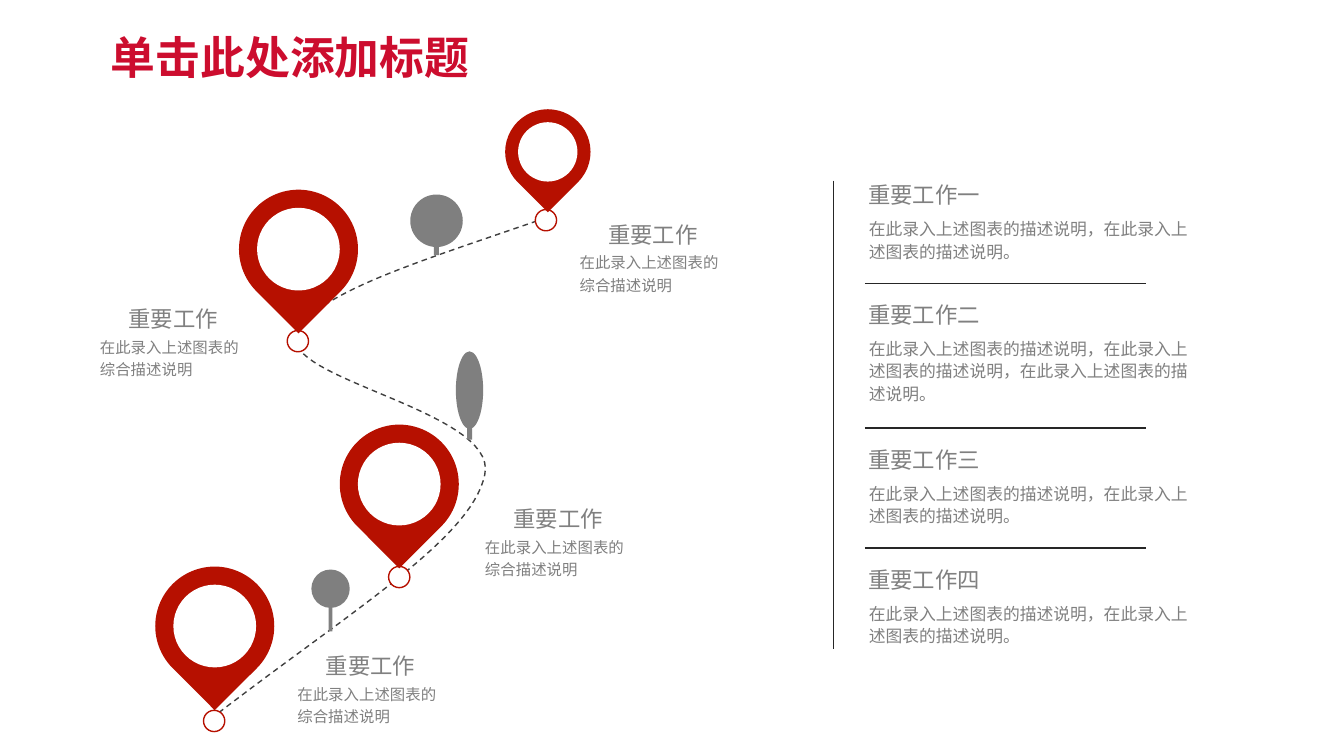
from lxml.etree import SubElement
from pptx import Presentation
from pptx.dml.color import RGBColor
from pptx.enum.dml import MSO_LINE
from pptx.enum.shapes import MSO_CONNECTOR, MSO_SHAPE
from pptx.enum.text import MSO_ANCHOR, PP_ALIGN
from pptx.oxml.ns import qn
from pptx.util import Pt

TITLE = "单击此处添加标题"
STOP_HEADING = "重要工作"
STOP_TEXT = "在此录入上述图表的综合描述说明"
# heading, description, number of lines it takes
SECTIONS = [
    ("重要工作一", "在此录入上述图表的描述说明，在此录入上述图表的描述说明。", 2),
    ("重要工作二", "在此录入上述图表的描述说明，在此录入上述图表的描述说明，"
                "在此录入上述图表的描述说明。", 3),
    ("重要工作三", "在此录入上述图表的描述说明，在此录入上述图表的描述说明。", 2),
    ("重要工作四", "在此录入上述图表的描述说明，在此录入上述图表的描述说明。", 2),
]
# pin centre, pin diameter, dot centre, top left of the description
STOPS = [
    ((391.3, 108.5), 61, (390, 157.3), (404.6, 173.5)),
    ((213.2, 178), 85, (212.8, 243.7), (61.9, 234)),
    ((285.2, 345.8), 85, (285.2, 412.2), (337, 376.6)),
    ((153.4, 447.2), 85, (153, 515), (203, 481.7)),
]
# canopy centre, canopy width and height, trunk width, trunk foot
TREES = [
    ((311.8, 157.7), (37.5, 37.5), 3.6, 182.3),
    ((335.4, 278.7), (19.5, 55.4), 3.6, 314),
    ((236.1, 420.5), (27.4, 27.4), 2.8, 451),
]
ROAD_START = (390.2, 155.5)
ROAD_CURVES = [
    ((306, 185), (218.9, 210.2), (211.7, 240.5)),
    ((204.5, 271.4), (356.4, 294.5), (346.3, 339.1)),
    ((337, 384.5), (252.7, 434.9), (152.6, 511.9)),
]
COLORS = {"title": "CC0D2E", "pin": "B61000", "tree": "7F7F7F", "text": "808080",
          "road": "404040", "rule": "262626", "white": "FFFFFF"}
FONT = "Noto Sans CJK SC"
DOT, HOLE = 15.2, 0.695
LIST_X, LIST_Y = 613, 126


def rgb(name):
    return RGBColor.from_string(COLORS[name])


def set_shape(sp, fill, line=None):
    sp.shadow.inherit = False
    sp.fill.solid()
    sp.fill.fore_color.rgb = rgb(fill)
    if line:
        sp.line.color.rgb = rgb(line)
        sp.line.width = Pt(1)
    else:
        sp.line.fill.background()
    return sp


def add_centred(shapes, kind, centre, w, h, fill, line=None):
    x, y = centre
    sp = shapes.add_shape(kind, Pt(x - w / 2), Pt(y - h / 2), Pt(w), Pt(h))
    return set_shape(sp, fill, line)


def set_font(p, size, color, latin=FONT, bold=False):
    f = p.font
    f.size, f.bold = Pt(size), bold
    f.color.rgb = rgb(color)
    f.name = latin
    SubElement(p._p.pPr.find(qn("a:defRPr")), qn("a:ea"), typeface=FONT)


def add_text(x, y, w, h, text, size, spacing=1.0, wrap=True, insets=(7.2, 3.6)):
    tf = s.shapes.add_textbox(Pt(x), Pt(y), Pt(w), Pt(h)).text_frame
    tf.word_wrap = wrap
    tf.margin_left = tf.margin_right = Pt(insets[0])
    tf.margin_top = tf.margin_bottom = Pt(insets[1])
    p = tf.paragraphs[0]
    p.text = text
    p.line_spacing = spacing
    set_font(p, size, "text")
    return p


def add_rule(x1, y1, x2, y2):
    ln = s.shapes.add_connector(MSO_CONNECTOR.STRAIGHT, Pt(x1), Pt(y1), Pt(x2), Pt(y2))
    ln.line.color.rgb = rgb("rule")
    ln.line.width = Pt(1)
    SubElement(ln._element.spPr, qn("a:effectLst"))


def bezier(a, b, c, d, steps=30):
    """Points along a cubic curve, without its start."""
    for i in range(1, steps + 1):
        t = i / steps
        u = 1 - t
        yield tuple(Pt(u**3 * a[k] + 3 * u * u * t * b[k] + 3 * u * t * t * c[k] + t**3 * d[k])
                    for k in (0, 1))


def add_road():
    fb = s.shapes.build_freeform(Pt(ROAD_START[0]), Pt(ROAD_START[1]))
    start = ROAD_START
    for b, c, end in ROAD_CURVES:
        fb.add_line_segments(bezier(start, b, c, end), close=False)
        start = end
    road = set_shape(fb.convert_to_shape(), "white", "road")
    road.fill.background()
    road.line.dash_style = MSO_LINE.DASH


prs = Presentation()
prs.slide_width, prs.slide_height = Pt(960), Pt(540)
s = prs.slides.add_slide(prs.slide_layouts[5])

title = s.shapes.title
title.left, title.top, title.width, title.height = Pt(72), Pt(20), Pt(828), Pt(45)
tf = title.text_frame
tf.vertical_anchor = MSO_ANCHOR.MIDDLE
p = tf.paragraphs[0]
p.text = TITLE
p.alignment = PP_ALIGN.LEFT
p.line_spacing = 0.9
set_font(p, 32, "title", "Montserrat", True)

add_road()
for _, _, dot, _ in STOPS:
    add_centred(s.shapes, MSO_SHAPE.OVAL, dot, DOT, DOT, "white", "pin")
for centre, size, _, _ in STOPS:
    pin = s.shapes.add_group_shape().shapes
    add_centred(pin, MSO_SHAPE.TEAR, centre, size, size, "pin").rotation = 135
    add_centred(pin, MSO_SHAPE.OVAL, centre, size * HOLE, size * HOLE, "white")

for (x, y), (w, h), trunk, foot in TREES:
    tree = s.shapes.add_group_shape().shapes
    add_centred(tree, MSO_SHAPE.RECTANGLE, (x, (y + foot) / 2), trunk, foot - y, "tree")
    add_centred(tree, MSO_SHAPE.OVAL, (x, y), w, h, "tree")

for _, _, _, (x, y) in STOPS:
    add_text(x, y, 123.8, 41.8, STOP_TEXT, 11, 1.2, insets=(9.4, 5))
    p = add_text(x + 7, y - 15.7, 109.4, 22.3, STOP_HEADING, 16, 0.8)
    p.alignment = PP_ALIGN.CENTER
    p.space_after = Pt(6)

add_rule(595.2, 129, 595.2, 463.7)
y = LIST_Y
for i, (heading, text, lines) in enumerate(SECTIONS):
    if i:
        add_rule(617.8, y - 9.2, 818.6, y - 9.2)
    add_text(LIST_X, y, 95, 26.6, heading, 16, wrap=False)
    add_text(LIST_X + 0.5, y + 25.6, 248.4, 7.2 + 16.1 * lines, text, 12, 1.1)
    y += 50 + 17.8 * lines

prs.save("out.pptx")
